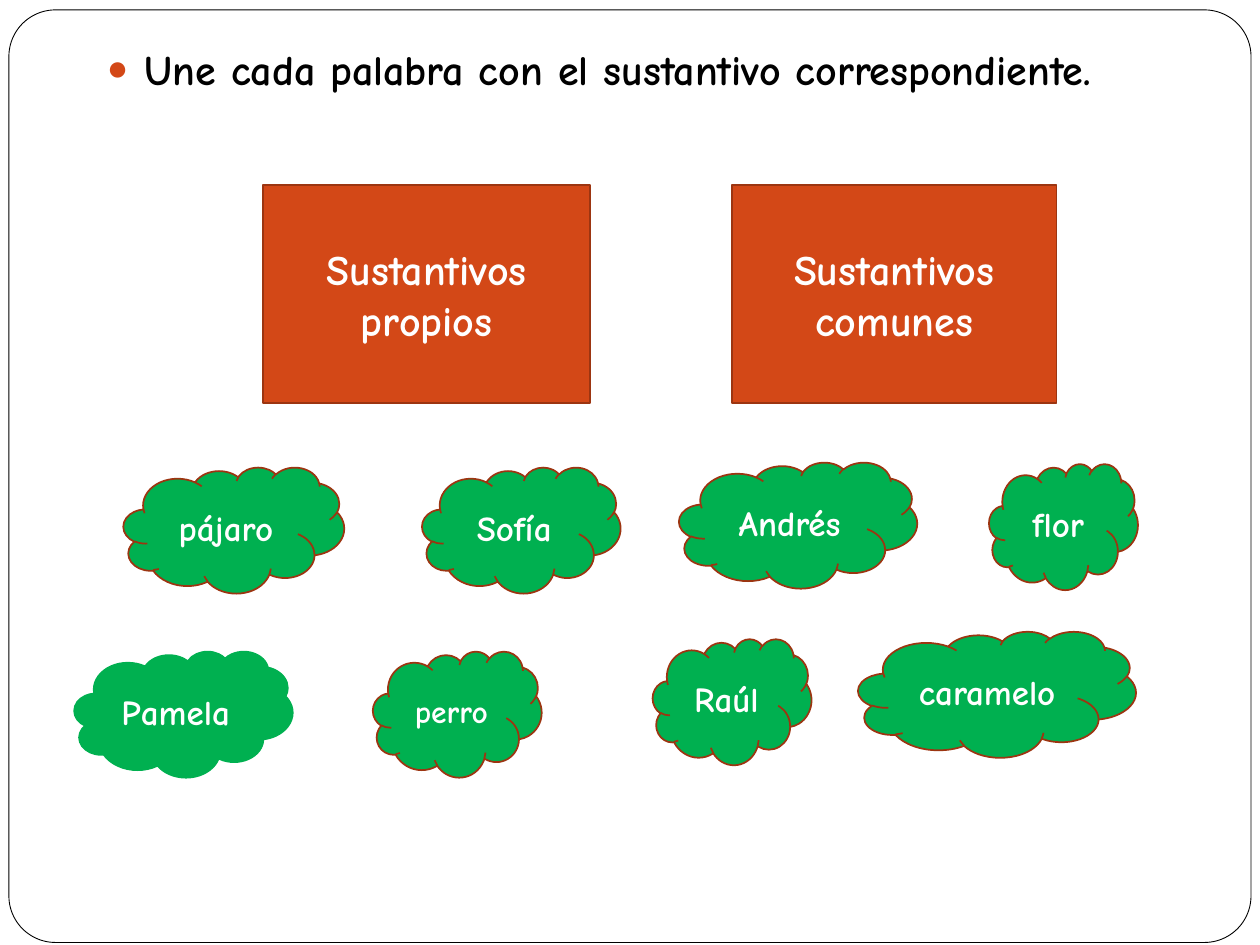
from lxml import etree
from pptx import Presentation
from pptx.dml.color import RGBColor
from pptx.enum.shapes import MSO_SHAPE
from pptx.enum.text import MSO_ANCHOR, PP_ALIGN
from pptx.oxml.ns import qn
from pptx.util import Cm, Pt

RECTANGLE = MSO_SHAPE.RECTANGLE
ROUNDED = MSO_SHAPE.ROUNDED_RECTANGLE
CLOUD = MSO_SHAPE.CLOUD
CENTER = PP_ALIGN.CENTER
MIDDLE = MSO_ANCHOR.MIDDLE

FONT = "Comic Neue"
COLORS = {
    "white": "FFFFFF",
    "black": "000000",
    "orange": "D34817",
    "brown": "9C3511",
    "green": "00B050",
}


def format_text(paragraph, size, color):
    paragraph.font.name = FONT
    paragraph.font.size = Pt(size)
    paragraph.font.bold = True
    paragraph.font.color.rgb = RGBColor.from_string(COLORS[color])


def add_box(kind, left, top, width, height, fill, line, line_width=1, text="", size=20):
    """Add a filled, outlined shape with centred white text; lengths in cm."""
    shape = slide.shapes.add_shape(kind, Cm(left), Cm(top), Cm(width), Cm(height))
    shape.shadow.inherit = False
    shape.fill.solid()
    shape.fill.fore_color.rgb = RGBColor.from_string(COLORS[fill])
    shape.line.color.rgb = RGBColor.from_string(COLORS[line])
    shape.line.width = Pt(line_width)
    if text:
        shape.text_frame.text = text
        shape.text_frame.vertical_anchor = MIDDLE
        paragraph = shape.text_frame.paragraphs[0]
        paragraph.alignment = CENTER
        format_text(paragraph, size, "white")
    return shape


presentation = Presentation()
presentation.slide_width = Cm(25.4)
presentation.slide_height = Cm(19.05)
slide = presentation.slides.add_slide(presentation.slide_layouts[1])

title = slide.shapes.title
title.element.getparent().remove(title.element)

# Rounded page frame, sent behind the instruction
frame = add_box(ROUNDED, 0.18, 0.2, 25.04, 18.8, "white", "black", 0.5)
frame.adjustments[0] = 0.05
slide.shapes.element.insert(2, frame.element)

# Bulleted instruction
body = slide.placeholders[1]
body.left, body.top = Cm(1.9), Cm(0.74)
body.width, body.height = Cm(22.23), Cm(16)
body.text_frame.text = "Une cada palabra con el sustantivo correspondiente."
instruction = body.text_frame.paragraphs[0]
instruction.space_before = Pt(5.8)
properties = instruction._p.get_or_add_pPr()
properties.set("marL", str(Cm(0.76)))
properties.set("indent", str(Cm(-0.76)))
bullet_color = etree.SubElement(properties, qn("a:buClr"))
etree.SubElement(bullet_color, qn("a:srgbClr"), val=COLORS["orange"])
etree.SubElement(properties, qn("a:buSzPct"), val="85000")
etree.SubElement(properties, qn("a:buChar"), char="●")
format_text(instruction, 24, "black")

# Noun categories
categories = [("Sustantivos propios", 5.3, 6.6), ("Sustantivos comunes", 14.75, 6.55)]
for text, left, width in categories:
    add_box(RECTANGLE, left, 3.73, width, 4.4, "orange", "brown", text=text, size=24)

# Words to match: text, left, top, width, outline, text size
words = [
    ("pájaro", 2.49, 9.42, 4.45, "brown", 20),
    ("Sofía", 8.51, 9.42, 4, "brown", 20),
    ("Andrés", 13.69, 9.32, 4.8, "brown", 20),
    ("flor", 19.94, 9.35, 3, "brown", 20),
    ("Pamela", 1.5, 13.13, 4.4, "green", 20),
    ("perro", 7.52, 13.13, 3.4, "brown", 18),
    ("Raúl", 13.16, 12.88, 3.2, "brown", 20),
    ("caramelo", 17.3, 12.73, 5.6, "brown", 20),
]
for text, left, top, width, outline, size in words:
    add_box(CLOUD, left, top, width, 2.54, "green", outline, text=text, size=size)

presentation.save("out.pptx")
